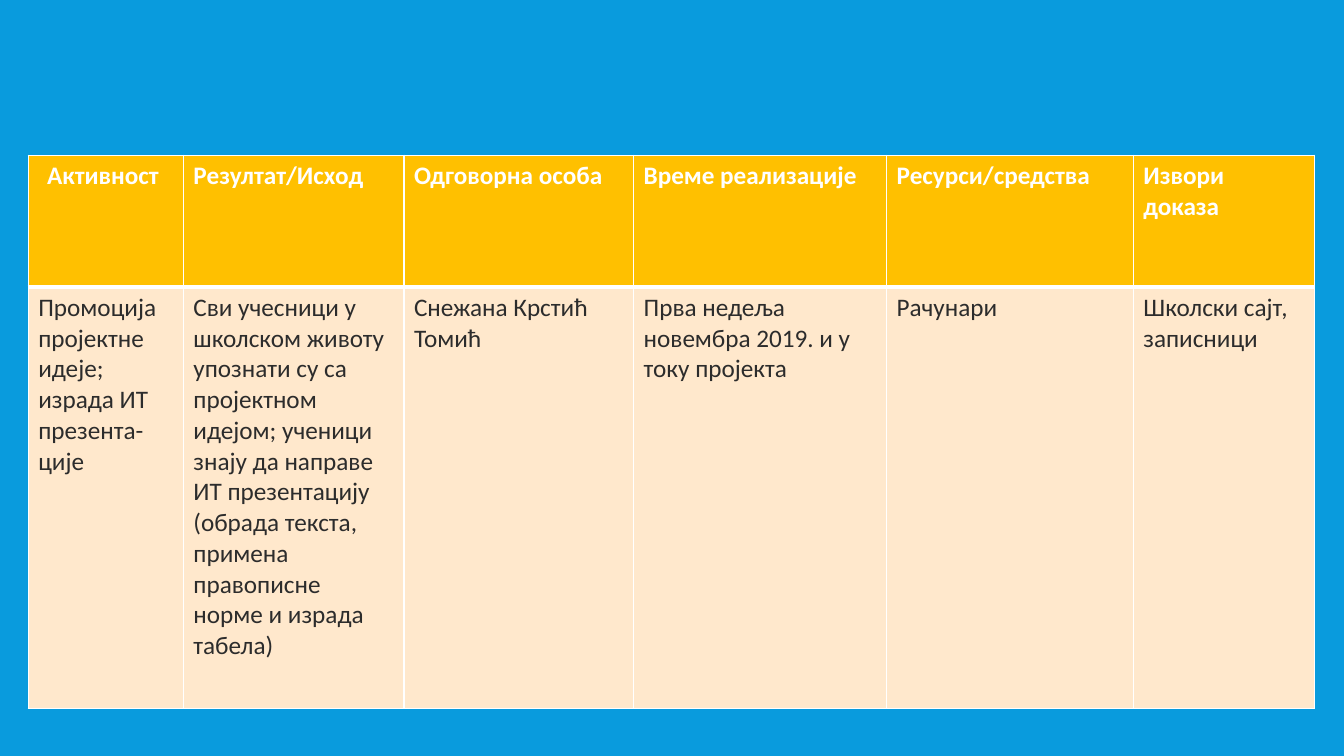
from lxml import etree
from pptx import Presentation
from pptx.dml.color import RGBColor
from pptx.enum.text import PP_ALIGN
from pptx.oxml.ns import qn
from pptx.util import Inches, Pt

CENTER, LEFT = PP_ALIGN.CENTER, PP_ALIGN.LEFT
BLANK_LAYOUT = 6
BLUE, AMBER, CREAM = "099BDD", "FFC000", "FFE8CC"
WHITE, DARK = "FFFFFF", "2C2C2C"

COLUMN_WIDTHS = [1.54, 2.19, 2.28, 2.51, 2.45, 1.8]
ROW_HEIGHTS = [1.31, 4.18]
HEADINGS = ["Активност ", "Резултат/Исход", "Одговорна особа",
            "Време реализације", "Ресурси/средства", "Извори доказа"]
ACTIVITY = [
    "Промоција пројектне идеје; израда ИТ презента-ције",
    "Сви учесници у школском животу упознати су са пројектном идејом; "
    "ученици знају да направе ИТ презентацију (обрада текста, примена "
    "правописне норме и израда табела)",
    "Снежана Крстић Томић",
    "Прва недеља новембра 2019. и у току пројекта",
    "Рачунари",
    "Школски сајт, записници",
]


def paint(color_format, color):
    color_format.rgb = RGBColor.from_string(color)


def fill_solid(fill, color):
    fill.solid()
    paint(fill.fore_color, color)


def set_borders(cell, top, bottom):
    """Draw white cell edges; widths are in points."""
    properties = cell._tc.get_or_add_tcPr()
    edges = [("a:lnL", 1), ("a:lnR", 1), ("a:lnT", top), ("a:lnB", bottom)]
    for position, (tag, width) in enumerate(edges):
        line = etree.Element(qn(tag), w=str(Pt(width)))
        solid = etree.SubElement(line, qn("a:solidFill"))
        etree.SubElement(solid, qn("a:srgbClr"), val=WHITE)
        properties.insert(position, line)


def write_cell(cell, text, color, bold, alignment):
    paragraph = cell.text_frame.paragraphs[0]
    paragraph.alignment = alignment
    run = paragraph.add_run()
    run.text = text
    run.font.name = "Calibri"
    run.font.size = Pt(18)
    run.font.bold = bold
    paint(run.font.color, color)


def add_activity_plan(slide, left, top, width, height):
    plan = slide.shapes.add_table(
        len(ROW_HEIGHTS), len(COLUMN_WIDTHS),
        Inches(left), Inches(top), Inches(width), Inches(height)).table

    # Column and row sizes share out the given box
    for column, share in zip(plan.columns, COLUMN_WIDTHS):
        column.width = Inches(width * share / sum(COLUMN_WIDTHS))
    for row, share in zip(plan.rows, ROW_HEIGHTS):
        row.height = Inches(height * share / sum(ROW_HEIGHTS))

    # Header row
    for index, heading in enumerate(HEADINGS):
        cell = plan.cell(0, index)
        fill_solid(cell.fill, AMBER)
        set_borders(cell, top=1, bottom=3)
        write_cell(cell, heading, WHITE, True, LEFT if index else CENTER)

    # Activity row
    for index, detail in enumerate(ACTIVITY):
        cell = plan.cell(1, index)
        fill_solid(cell.fill, CREAM)
        set_borders(cell, top=3, bottom=1)
        write_cell(cell, detail, DARK, False, LEFT)


def main():
    presentation = Presentation()
    presentation.slide_width = Inches(13.33)
    presentation.slide_height = Inches(7.5)
    slide = presentation.slides.add_slide(
        presentation.slide_layouts[BLANK_LAYOUT])
    fill_solid(slide.background.fill, BLUE)
    add_activity_plan(slide, 0.28, 1.54, 12.76, 5.49)
    presentation.save("out.pptx")


if __name__ == "__main__":
    main()
